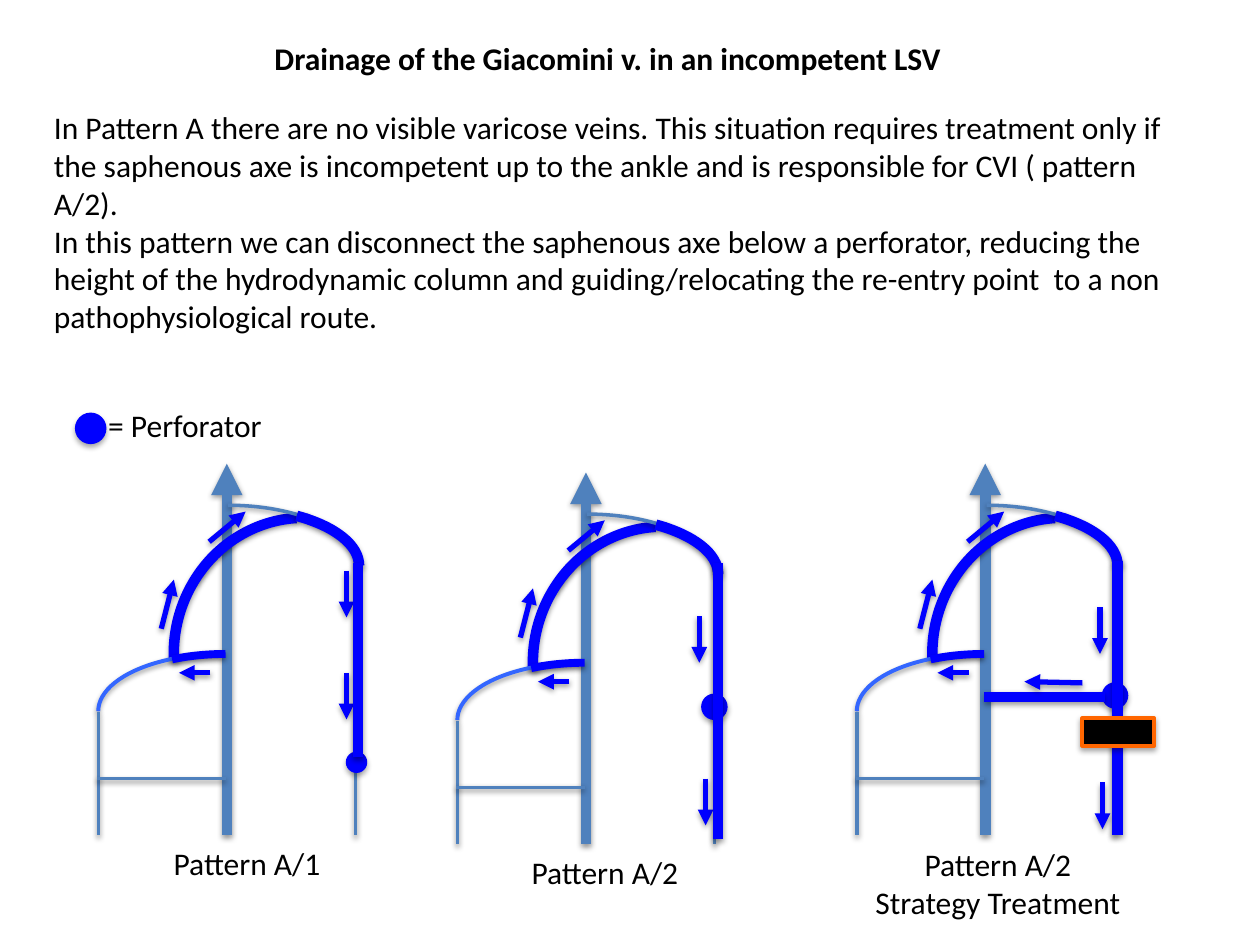
"""Build the slide on drainage of the Giacomini vein."""
from lxml import etree
from pptx import Presentation
from pptx.dml.color import RGBColor
from pptx.enum.shapes import MSO_CONNECTOR, MSO_SHAPE
from pptx.enum.text import MSO_AUTO_SIZE, PP_ALIGN
from pptx.oxml.ns import qn
from pptx.util import Inches, Pt

LINE = MSO_CONNECTOR.STRAIGHT
ARC, OVAL, RECT = MSO_SHAPE.ARC, MSO_SHAPE.OVAL, MSO_SHAPE.RECTANGLE
LEFT, MID = PP_ALIGN.LEFT, PP_ALIGN.CENTER
FIT = MSO_AUTO_SIZE.SHAPE_TO_FIT_TEXT
HUES = {"steel": "4F81BD", "blue": "0000FF", "sky": "3366FF",
        "orange": "FF6600", "black": "000000"}

deck = Presentation()
deck.slide_width, deck.slide_height = Inches(10), Inches(7.5)
slide = deck.slides.add_slide(deck.slide_layouts[6])


def draw(kind, place, hue, width, fill=None, tip=None, flip=False, bend=None):
    spots = [Inches(n) for n in place]
    if kind is LINE:
        item = slide.shapes.add_connector(LINE, *spots)
    else:
        item = slide.shapes.add_shape(kind, *spots)
        if fill:
            item.fill.solid()
            item.fill.fore_color.rgb = RGBColor.from_string(HUES[fill])
        else:
            item.fill.background()
    item.line.color.rgb = RGBColor.from_string(HUES[hue])
    item.line.width = Pt(width)
    props = item.element.spPr
    if tip:
        etree.SubElement(props.find(qn("a:ln")), qn(tip), type="triangle")
    if flip:
        props.find(qn("a:xfrm")).set("flipH", "1")
    if bend:
        item.adjustments[0], item.adjustments[1] = bend
    glow = etree.SubElement(props, qn("a:effectLst"))
    shade = etree.SubElement(glow, qn("a:outerShdw"), blurRad="40000",
                             dist="23000" if fill else "20000",
                             dir="5400000", rotWithShape="0")
    tint = etree.SubElement(shade, qn("a:srgbClr"), val=HUES["black"])
    etree.SubElement(tint, qn("a:alpha"), val="35000" if fill else "38000")


def write(place, lines, wrap=False, bold=False, align=LEFT):
    frame = slide.shapes.add_textbox(*[Inches(n) for n in place]).text_frame
    frame.word_wrap, frame.auto_size = wrap, FIT
    for i, line in enumerate(lines):
        para = frame.add_paragraph() if i else frame.paragraphs[0]
        para.alignment = align
        run = para.add_run()
        run.text = line
        run.font.name, run.font.size, run.font.bold = "Calibri", Pt(18), bold
        run.font.color.rgb = RGBColor.from_string(HUES["black"])


write((2.08, 0.26, 5.78, 0.4),
      ["Drainage of the Giacomini v. in an incompetent LSV"], True, True)
write((0.33, 0.81, 9.14, 2.22), [
    "In Pattern A there are no visible varicose veins. This situation "
    "requires treatment only if the saphenous axe is incompetent up to the "
    "ankle and is responsible for CVI ( pattern A/2).",
    "In this pattern we can disconnect the saphenous axe below a perforator, "
    "reducing the height of the hydrodynamic column and guiding/relocating "
    "the re-entry point  to a non pathophysiological route."], True)

legs = [
    (0, 0, (2.75, 5.97, 0.16), [(2.75, 4.53), (2.75, 5.34)],
     (2.84, 4.47, 6.01), (1.28, 6.65, 1.39, 0.4), ["Pattern A/1"], LEFT),
    (2.85, 0.07, (5.57, 5.51, 0.2), [(5.55, 4.89), (5.6, 6.18)],
     (5.7, 4.47, 6.66), (4.12, 6.72, 1.39, 0.4), ["Pattern A/2"], LEFT),
    (6.02, 0, (8.75, 5.42, 0.2), [(8.73, 4.82), (8.75, 6.21)],
     (8.87, 4.45, 6.63), (6.82, 6.66, 2.2, 0.71),
     ["Pattern A/2", "Strategy Treatment"], MID),
]
veins = [
    (LINE, (1.8, 3.68, 1.8, 6.63), "steel", 6, {"tip": "a:headEnd"}),
    (ARC, (1.41, 4.09, 2.07, 2.16), "steel", 2,
     {"flip": True, "bend": (162, 197.07)}),
    (ARC, (1.38, 4.11, 2.07, 2.16), "blue", 6,
     {"flip": True, "bend": (163.96, 1.63)}),
    (ARC, (0.78, 5.19, 1.97, 0.91), "sky", 2.25, {"flip": True}),
    (ARC, (0.8, 4.01, 2.02, 0.92), "steel", 2, {}),
    (LINE, (2.82, 4.47, 2.82, 6.63), "steel", 2, {}),
    (ARC, (0.78, 5.19, 2.02, 0.92), "blue", 4.5,
     {"flip": True, "bend": (162, 189.25)}),
    (LINE, (0.78, 5.65, 0.78, 6.63), "steel", 2, {}),
    (LINE, (0.77, 6.18, 1.79, 6.18), "steel", 2, {}),
    (LINE, (1.67, 5.34, 1.42, 5.34), "blue", 3, {"tip": "a:tailEnd"}),
    (LINE, (1.28, 4.99, 1.38, 4.6), "blue", 3, {"tip": "a:tailEnd"}),
    (LINE, (1.66, 4.3, 1.95, 4.06), "blue", 3, {"tip": "a:tailEnd"}),
    (ARC, (0.83, 4.03, 2.02, 0.92), "blue", 6, {"bend": (193.49, 0)}),
]
for dx, dy, dot, flows, trunk, spot, label, align in legs:
    for kind, (a, b, c, d), hue, width, more in veins:
        if kind is LINE:
            c, d = c + dx, d + dy
        draw(kind, (a + dx, b + dy, c, d), hue, width, **more)
    x, y, size = dot
    draw(OVAL, (x, y, size, size), "blue", 0.75, "blue")
    for x, y in flows:
        draw(LINE, (x, y, x, y + 0.37), "blue", 3, tip="a:tailEnd")
    x, top, end = trunk
    draw(LINE, (x, top, x, end), "blue", 6)
    write(spot, label, align=align)

draw(RECT, (8.59, 5.7, 0.57, 0.22), "orange", 2.25, "black")
draw(LINE, (8.77, 5.53, 7.81, 5.53), "blue", 6)
draw(LINE, (8.59, 5.42, 8.13, 5.41), "blue", 3, tip="a:tailEnd")
draw(OVAL, (0.6, 3.28, 0.24, 0.24), "blue", 0.75, "blue")
write((0.76, 3.17, 1.45, 0.4), ["= Perforator"])

deck.save("out.pptx")
